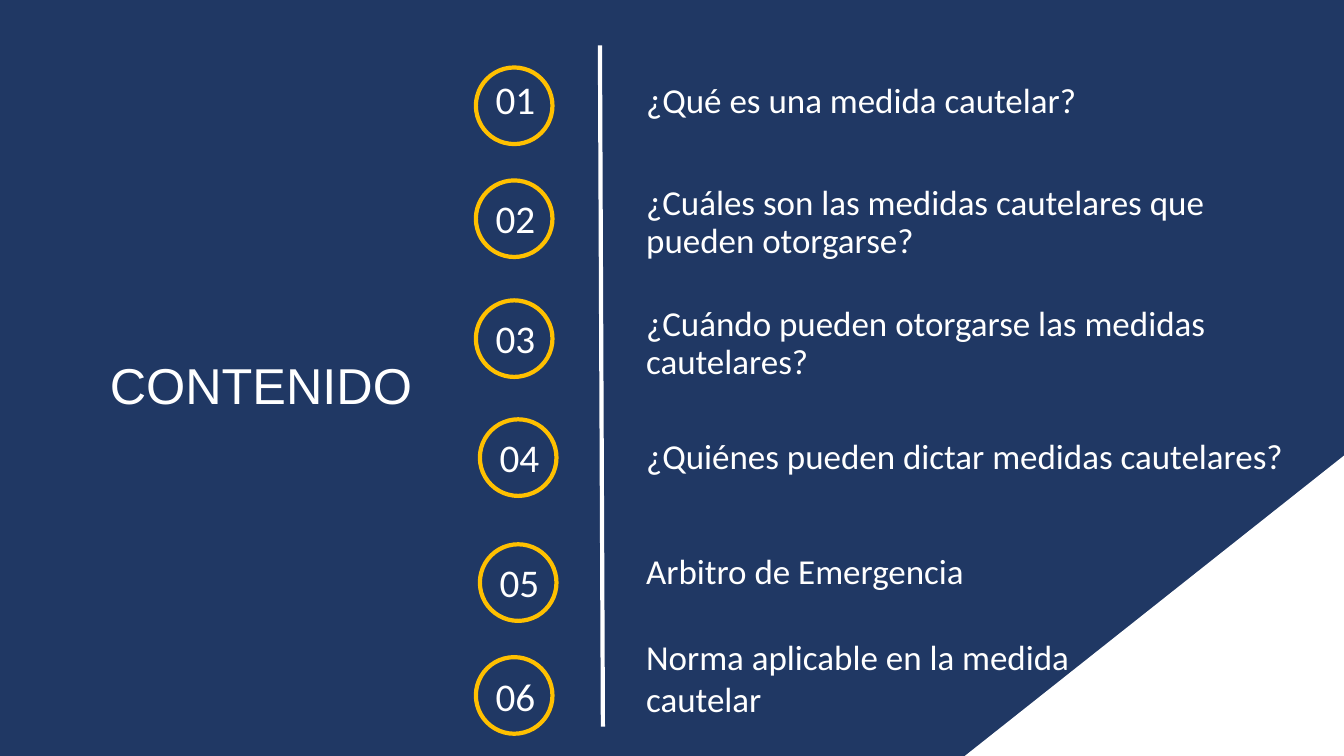
from dataclasses import dataclass

from lxml import etree
from pptx import Presentation
from pptx import util as u
from pptx.dml.color import RGBColor
from pptx.enum import shapes, text
from pptx.oxml.ns import qn


@dataclass(frozen=True)
class Theme:
    navy: RGBColor = RGBColor(0x20, 0x38, 0x64)
    gold: RGBColor = RGBColor(0xFF, 0xC0, 0x00)
    white: RGBColor = RGBColor(0xFF, 0xFF, 0xFF)
    heading_font: str = "Arial"
    body_font: str = "Calibri"
    heading_size: float = 36
    number_size: float = 28
    topic_size: float = 25
    stroke: float = 3
    tight: float = 0.9
    space_before: float = 10


@dataclass(frozen=True)
class Topic:
    wording: str
    ring_left: float
    ring_top: float
    top: float
    width: float
    height: float
    number_drop: float = 1.87
    tight: bool = True


THEME = Theme()
SLIDE_WIDTH, SLIDE_HEIGHT = u.Inches(13.333), u.Inches(7.5)
RING_WIDTH, RING_HEIGHT = 5.7, 10.13
NUMBER_WIDTH, NUMBER_HEIGHT, NUMBER_INDENT = 4.5, 7.87, 0.73
TOPIC_LEFT = 47.34

TOPICS = [
    Topic("¿Qué es una medida cautelar?", 35.41, 8.93, 10.4, 34.51, 7.87, number_drop=1.07),
    Topic("¿Cuáles son las medidas cautelares que pueden otorgarse?",
          35.41, 23.87, 23.87, 45.01, 6.13),
    Topic("¿Cuándo pueden otorgarse las medidas cautelares?",
          35.41, 39.73, 39.87, 43.59, 7.47),
    Topic("¿Quiénes pueden dictar medidas cautelares?",
          35.71, 55.47, 56.8, 49.36, 6.93, tight=False),
    Topic("Arbitro de Emergencia", 35.71, 72, 72, 28.51, 6.93, tight=False),
    Topic("Norma aplicable en la medida cautelar",
          35.41, 86.93, 83.47, 40.06, 12.53, number_drop=2, tight=False),
]


def across(share: float) -> int:
    return round(SLIDE_WIDTH * share / 100)


def down(share: float) -> int:
    return round(SLIDE_HEIGHT * share / 100)


def add_text(slide, wording: str, left: float, top: float, width: float, height: float, *,
             size: float, font: str = THEME.body_font, tight: bool = True,
             space_before: float = THEME.space_before,
             anchor=text.MSO_ANCHOR.TOP) -> None:
    frame = slide.shapes.add_textbox(across(left), down(top), across(width), down(height)).text_frame
    frame.word_wrap = True
    frame.vertical_anchor = anchor
    paragraph = frame.paragraphs[0]
    if tight:
        paragraph.line_spacing = THEME.tight
        paragraph.space_before = u.Pt(space_before)
    run = paragraph.add_run()
    run.text = wording
    run.font.name = font
    run.font.size = u.Pt(size)
    run.font.color.rgb = THEME.white


def add_corner(slide) -> None:
    outline = slide.shapes.build_freeform(across(71.79), down(100))
    outline.add_line_segments([(across(100), down(60.27)), (across(100), down(100))])
    corner = outline.convert_to_shape()
    corner.shadow.inherit = False
    corner.fill.solid()
    corner.fill.fore_color.rgb = THEME.white
    corner.line.fill.background()


def add_divider(slide) -> None:
    divider = slide.shapes.add_connector(
        shapes.MSO_CONNECTOR.STRAIGHT, across(44.64), down(6), across(44.86), down(96.13))
    divider.line.color.rgb = THEME.white
    divider.line.width = u.Pt(THEME.stroke)
    etree.SubElement(divider._element.spPr, qn("a:effectLst"))


def add_topic(slide, order: int, topic: Topic) -> None:
    ring = slide.shapes.add_shape(
        shapes.MSO_SHAPE.OVAL, across(topic.ring_left), down(topic.ring_top),
        across(RING_WIDTH), down(RING_HEIGHT))
    ring.shadow.inherit = False
    ring.fill.background()
    ring.line.color.rgb = THEME.gold
    ring.line.width = u.Pt(THEME.stroke)
    add_text(slide, f"{order:02}", topic.ring_left + NUMBER_INDENT,
             topic.ring_top + topic.number_drop, NUMBER_WIDTH, NUMBER_HEIGHT,
             size=THEME.number_size)
    add_text(slide, topic.wording, TOPIC_LEFT, topic.top, topic.width, topic.height,
             size=THEME.topic_size, tight=topic.tight)


def main() -> None:
    deck = Presentation()
    deck.slide_width, deck.slide_height = SLIDE_WIDTH, SLIDE_HEIGHT
    slide = deck.slides.add_slide(deck.slide_layouts[6])
    slide.background.fill.solid()
    slide.background.fill.fore_color.rgb = THEME.navy
    add_corner(slide)
    add_text(slide, "CONTENIDO", 7.43, 47.07, 24.53, 8.53, size=THEME.heading_size,
             font=THEME.heading_font, space_before=0, anchor=text.MSO_ANCHOR.BOTTOM)
    add_divider(slide)
    for order, topic in enumerate(TOPICS, start=1):
        add_topic(slide, order, topic)
    deck.save("out.pptx")


if __name__ == "__main__":
    main()
